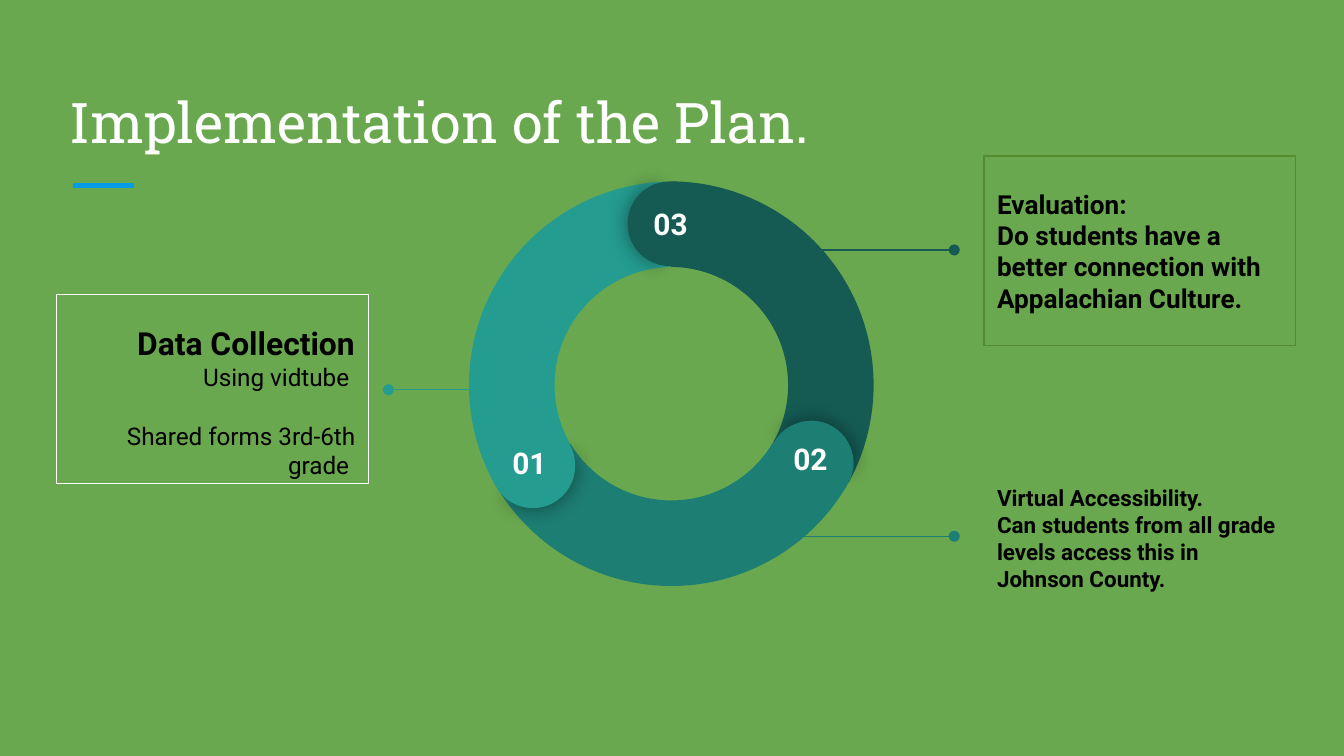
from lxml import etree
from pptx import Presentation
from pptx.dml.color import RGBColor
from pptx.enum.shapes import MSO_CONNECTOR, MSO_SHAPE
from pptx.enum.text import MSO_ANCHOR, PP_ALIGN
from pptx.oxml.ns import qn
from pptx.util import Inches, Pt

STRAIGHT = MSO_CONNECTOR.STRAIGHT
RECTANGLE, BLOCK_ARC, PIE = MSO_SHAPE.RECTANGLE, MSO_SHAPE.BLOCK_ARC, MSO_SHAPE.PIE
TOP, MIDDLE, BOTTOM = MSO_ANCHOR.TOP, MSO_ANCHOR.MIDDLE, MSO_ANCHOR.BOTTOM
LEFT, CENTER, RIGHT = PP_ALIGN.LEFT, PP_ALIGN.CENTER, PP_ALIGN.RIGHT

COLORS = {
    "background": "6AA84F", "accent": "039BE5", "white": "FFFFFF", "black": "000000",
    "olive": "558B2F", "light teal": "249C90", "teal": "1D7E74", "dark teal": "155B54",
}
COLORS = {name: RGBColor.from_string(value) for name, value in COLORS.items()}

deck = Presentation()
deck.slide_width, deck.slide_height = Inches(10), Inches(5.625)
COLUMN = deck.slide_width / 100
ROW = deck.slide_height / 56.25
page = deck.slides.add_slide(deck.slide_layouts[6])
page.background.fill.solid()
page.background.fill.fore_color.rgb = COLORS["background"]


def grid(left, top, width, height):
    """Turn columns and rows into slide lengths."""
    return [round(n * unit) for n, unit in zip((left, top, width, height), (COLUMN, ROW) * 2)]


def write(shape, paragraphs, color, align, anchor, font="Roboto"):
    """Fill a shape with paragraphs given as (text, size, bold, space before)."""
    frame = shape.text_frame
    frame.word_wrap = True
    frame.vertical_anchor = anchor
    frame.margin_left = frame.margin_right = round(COLUMN)
    frame.margin_top = frame.margin_bottom = round(ROW)
    frame.text = "\n".join(text for text, *_ in paragraphs)
    for para, (_, size, bold, before) in zip(frame.paragraphs, paragraphs):
        para.alignment = align
        para.space_before = Pt(before)
        for span in para.runs:
            span.font.name, span.font.size, span.font.bold = font, Pt(size), bold
            span.font.color.rgb = COLORS[color]


# Title
title = page.shapes.add_textbox(*grid(4.2, 5, 91.5, 7.5))
write(title, [("Implementation of the Plan.", 30, False, 0)], "white", LEFT, BOTTOM, "Roboto Slab")

# Title rule and callout lines: start column, end column, row, colour, weight, dot at the end
rules = [
    (5.4, 10, 13.8, "accent", 3, False),
    (35.8, 28.9, 29, "light teal", 0.75, True),
    (57, 71, 18.6, "dark teal", 0.75, True),
    (57, 71, 39.9, "teal", 0.75, True),
]
for start, end, row, color, weight, dotted in rules:
    rule = page.shapes.add_connector(STRAIGHT, *grid(start, row, end, row))
    rule.line.color.rgb = COLORS[color]
    rule.line.width = Pt(weight)
    if dotted:
        etree.SubElement(rule.line._get_or_add_ln(), qn("a:tailEnd"), type="oval")
    etree.SubElement(rule._element.spPr, qn("a:effectLst"))

# Callouts: left, top, outline, alignment, anchor, paragraphs
callouts = [
    (4.2, 21.9, "white", RIGHT, TOP, [
        ("Data Collection", 17, True, 0),
        ("Using vidtube ", 13, False, 0),
        ("Shared forms 3rd-6th grade ", 13, False, 16)]),
    (73.2, 11.6, "olive", LEFT, MIDDLE, [
        ("Evaluation:", 14, True, 0),
        ("Do students have a better connection with Appalachian Culture.", 14, True, 0)]),
    (73.2, 33, None, LEFT, MIDDLE, [
        ("Virtual Accessibility.", 12, True, 0),
        ("Can students from all grade levels access this in Johnson County.", 12, True, 0)]),
]
for left, top, outline, align, anchor, paragraphs in callouts:
    box = page.shapes.add_shape(RECTANGLE, *grid(left, top, 23.2, 14.1))
    box.shadow.inherit = False
    box.fill.background()
    if outline:
        box.line.color.rgb = COLORS[outline]
        box.line.width = Pt(0.75)
    else:
        box.line.fill.background()
    write(box, paragraphs, "black", align, anchor)
    if anchor == TOP:
        box.text_frame.margin_top = round(2.2 * ROW)

# Ring: arcs first, then for each arc a round end made of a shadowed and a plain half
ARC_SIZE, KNOB_SIZE = 30.3, 6.3
SHADOWED_HALF, PLAIN_HALF = (61.9, 149.96), (40.28, 171.84)
steps = [
    # label, colour, arc corner, arc turn, knob corner, knob turn, label corner
    ("03", "dark teal", (34.7, 13.5), 60, (46.7, 13.5), 0, (47.1, 14.3)),
    ("02", "teal", (34.8, 13.3), 180, (57.2, 31.3), 120, (57.5, 31.8)),
    ("01", "light teal", (34.9, 13.5), 300, (36.5, 31.5), 240, (36.6, 32.1)),
]
parts = [(BLOCK_ARC, color, corner, ARC_SIZE, turn, (126.23, 197.2, 0.21), False)
         for _, color, corner, turn, *_ in steps]
for _, color, _, _, corner, turn, _ in steps:
    parts.append((PIE, color, corner, KNOB_SIZE, turn + 0.6, SHADOWED_HALF, True))
    parts.append((PIE, color, corner, KNOB_SIZE, (turn + 180) % 360, PLAIN_HALF, False))

for kind, color, corner, size, turn, adjustments, shadowed in parts:
    part = page.shapes.add_shape(kind, *grid(*corner, size, size))
    part.rotation = turn
    for index, value in enumerate(adjustments):
        part.adjustments[index] = value
    part.fill.solid()
    part.fill.fore_color.rgb = COLORS[color]
    part.line.fill.background()
    part.shadow.inherit = False
    if shadowed:
        effects = part._element.spPr.find(qn("a:effectLst"))
        shadow = etree.SubElement(effects, qn("a:outerShdw"), blurRad=str(Pt(11.25)),
                                  dist="0", dir="0", algn="ctr", rotWithShape="0")
        shade = etree.SubElement(shadow, qn("a:srgbClr"), val=str(COLORS["black"]))
        etree.SubElement(shade, qn("a:alpha"), val="43000")

for label, *_, corner in steps:
    number = page.shapes.add_textbox(*grid(*corner, 5.6, 2.9))
    write(number, [(label, 16, True, 0)], "white", CENTER, TOP)

deck.save("out.pptx")
